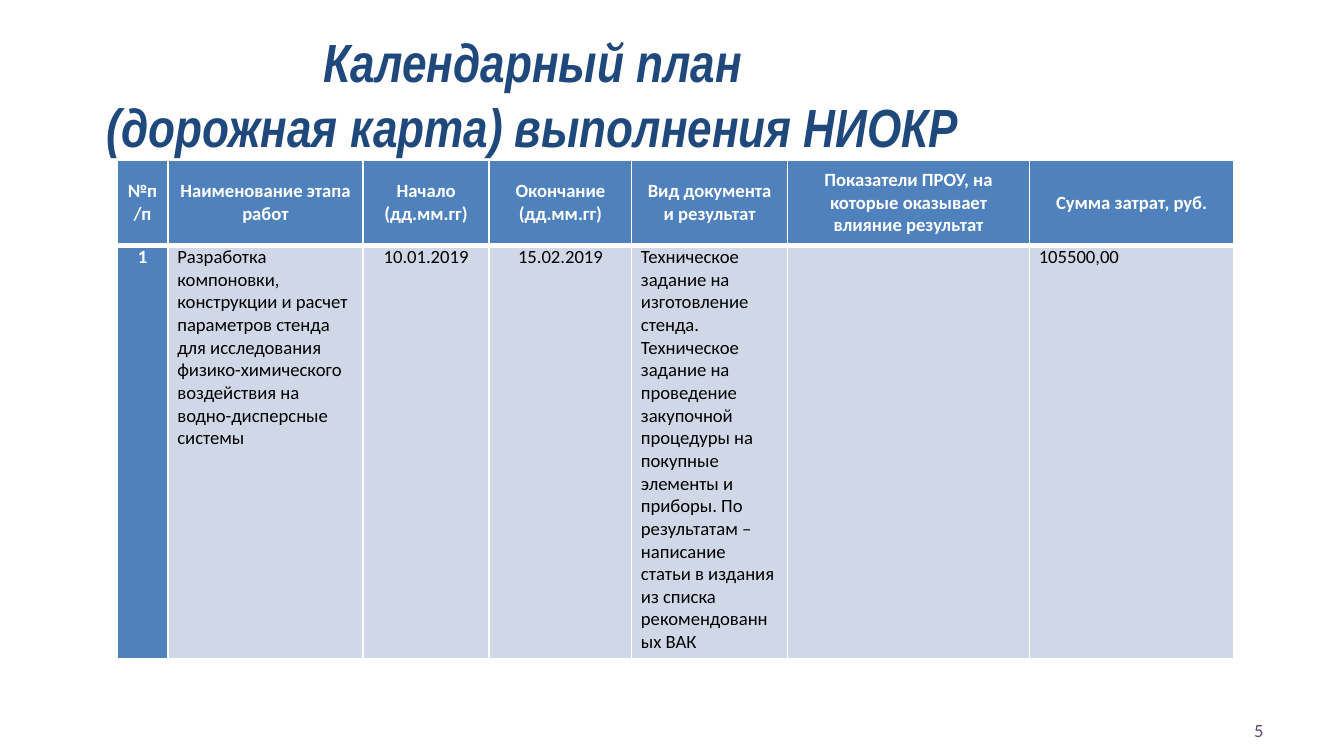
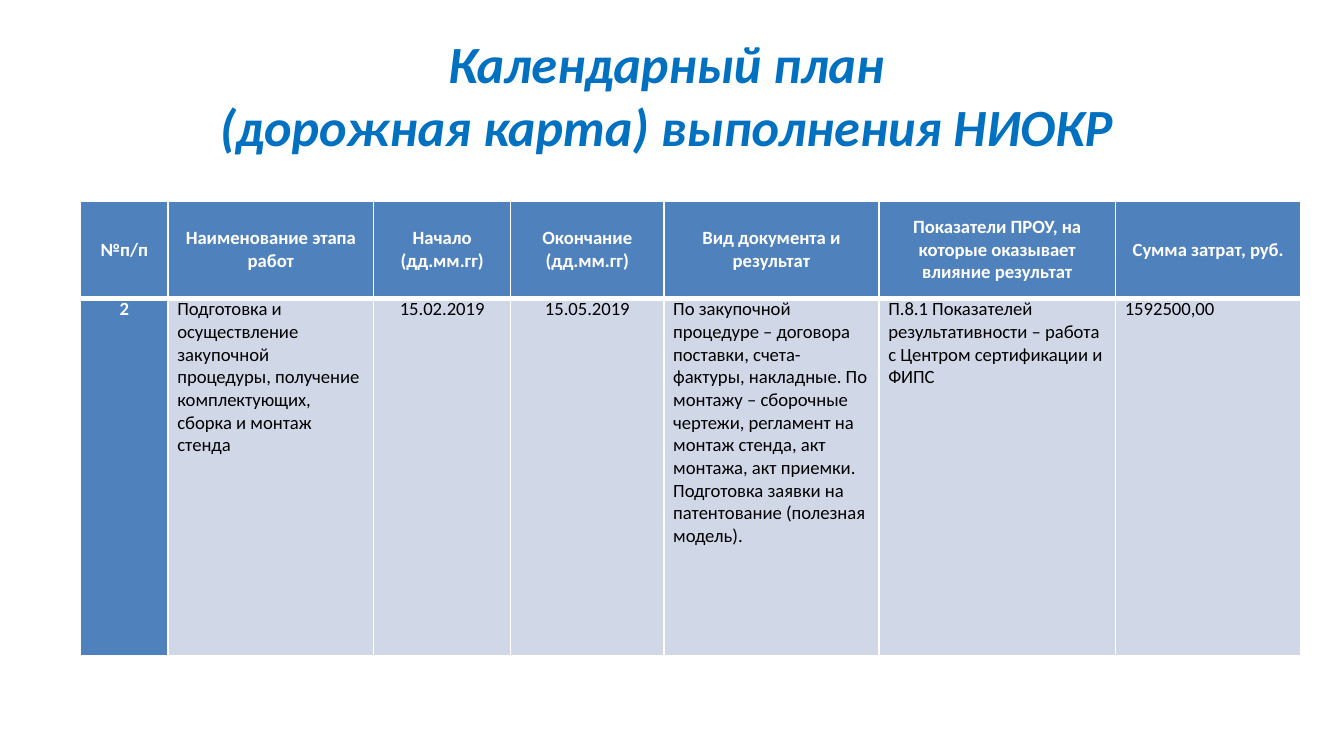
from lxml.etree import SubElement
from pptx import Presentation
from pptx.dml.color import RGBColor
from pptx.enum.text import MSO_ANCHOR, MSO_AUTO_SIZE, PP_ALIGN
from pptx.oxml.ns import qn
from pptx.util import Inches, Pt

# Shared colours, fonts and wording
WHITE, BLACK = "FFFFFF", "000000"
HEADER_FILL, BODY_FILL = "4F81BD", "D0D8E8"
NAVY, BLUE, PURPLE = "1F497D", "0070C0", "604A7B"
FONT = "Calibri"
TITLE = "Календарный план \v(дорожная карта) выполнения НИОКР "
HEADERS = [
    "№п/п",
    "Наименование этапа работ",
    "Начало\n(дд.мм.гг)",
    "Окончание\n(дд.мм.гг)",
    "Вид документа и результат",
    "Показатели ПРОУ, на которые оказывает влияние результат",
    "Сумма затрат, руб.",
]
CENTERED_COLUMNS = (0, 2, 3)

# Plan stages
STAGE_1 = [
    "1",
    "Разработка компоновки, конструкции и расчет параметров стенда для "
    "исследования физико-химического воздействия на водно-дисперсные системы",
    "10.01.2019",
    "15.02.2019",
    "Техническое задание на изготовление стенда. Техническое задание на "
    "проведение закупочной процедуры на покупные элементы и приборы. По "
    "результатам – написание статьи в издания из списка рекомендованных ВАК",
    "",
    "105500,00",
]
STAGE_2 = [
    "2",
    "Подготовка и осуществление закупочной процедуры, получение "
    "комплектующих, сборка и монтаж стенда",
    "15.02.2019",
    "15.05.2019",
    "По закупочной процедуре – договора поставки, счета-фактуры, накладные. "
    "По монтажу – сборочные чертежи, регламент на монтаж стенда, акт монтажа, "
    "акт приемки. Подготовка заявки на патентование (полезная модель).",
    "П.8.1 Показателей результативности – работа с Центром сертификации и ФИПС",
    "1592500,00",
]


def rgb(color):
    return RGBColor.from_string(color)


def format_text(tf, size, color, align, font=FONT, bold=False, italic=False):
    for p in tf.paragraphs:
        p.alignment = align
        for r in p.runs:
            r.font.name = font
            r.font.size = Pt(size)
            r.font.bold = bold
            r.font.italic = italic
            r.font.color.rgb = rgb(color)


def set_borders(cell, top, bottom):
    """White cell edges; the line elements stand before the fill."""
    tcPr = cell._tc.get_or_add_tcPr()
    edges = {"a:lnL": 1, "a:lnR": 1, "a:lnT": top, "a:lnB": bottom}
    for i, (tag, width) in enumerate(edges.items()):
        ln = SubElement(tcPr, qn(tag), w=str(Pt(width)))
        fill = SubElement(ln, qn("a:solidFill"))
        SubElement(fill, qn("a:srgbClr"), val=WHITE)
        tcPr.insert(i, ln)


def add_title(slide, box, size, color, font):
    sp = slide.shapes.title
    sp.left, sp.top, sp.width, sp.height = map(Inches, box)
    tf = sp.text_frame
    tf.text = TITLE
    tf.word_wrap = True
    tf.auto_size = MSO_AUTO_SIZE.NONE
    tf.vertical_anchor = MSO_ANCHOR.MIDDLE
    format_text(tf, size, color, PP_ALIGN.CENTER, font, bold=True, italic=True)


def fill_cell(cell, text, is_header, column):
    accent = is_header or column == 0
    centered = is_header or column in CENTERED_COLUMNS
    cell.text = text
    cell.margin_left = cell.margin_right = Inches(0.07)
    cell.margin_top = cell.margin_bottom = 0
    cell.vertical_anchor = MSO_ANCHOR.MIDDLE if is_header else MSO_ANCHOR.TOP
    cell.fill.solid()
    cell.fill.fore_color.rgb = rgb(HEADER_FILL if accent else BODY_FILL)
    format_text(cell.text_frame, 10, WHITE if accent else BLACK,
                PP_ALIGN.CENTER if centered else PP_ALIGN.LEFT, bold=accent)
    set_borders(cell, *((1, 3) if is_header else (3, 1)))


def add_plan_table(slide, left, top, widths, heights, stage):
    rows = [HEADERS, stage]
    table = slide.shapes.add_table(
        len(rows), len(HEADERS), Inches(left), Inches(top),
        Inches(sum(widths)), Inches(sum(heights))).table
    for column, width in zip(table.columns, widths):
        column.width = Inches(width)
    for row, height in zip(table.rows, heights):
        row.height = Inches(height)
    for i, texts in enumerate(rows):
        for j, text in enumerate(texts):
            fill_cell(table.cell(i, j), text, i == 0, j)


def add_page_number(slide, number):
    sp = slide.shapes.add_textbox(
        Inches(7.17), Inches(5.28), Inches(2.33), Inches(0.3))
    tf = sp.text_frame
    tf.text = number
    tf.word_wrap = True
    tf.vertical_anchor = MSO_ANCHOR.MIDDLE
    format_text(tf, 10, PURPLE, PP_ALIGN.RIGHT)


def main():
    # Widescreen page, 16:9
    prs = Presentation()
    prs.slide_width = Inches(10)
    prs.slide_height = prs.slide_width * 9 // 16
    title_only = prs.slide_layouts[5]

    # First stage
    s = prs.slides.add_slide(title_only)
    add_title(s, (-0.27, 0.47, 8.56, 0.45), 28.8, NAVY, "Arial Narrow")
    add_plan_table(s, 0.87, 1.19, [0.38, 1.45, 0.94, 1.06, 1.16, 1.8, 1.52],
                   [0.64, 3.07], STAGE_1)
    add_page_number(s, "5")

    # Second stage
    s = prs.slides.add_slide(title_only)
    add_title(s, (0.5, 0.23, 9, 0.94), 28, BLUE, FONT)
    add_plan_table(s, 0.6, 1.5, [0.65, 1.53, 1.02, 1.14, 1.6, 1.76, 1.38],
                   [0.72, 2.66], STAGE_2)

    prs.save("out.pptx")


if __name__ == "__main__":
    main()
